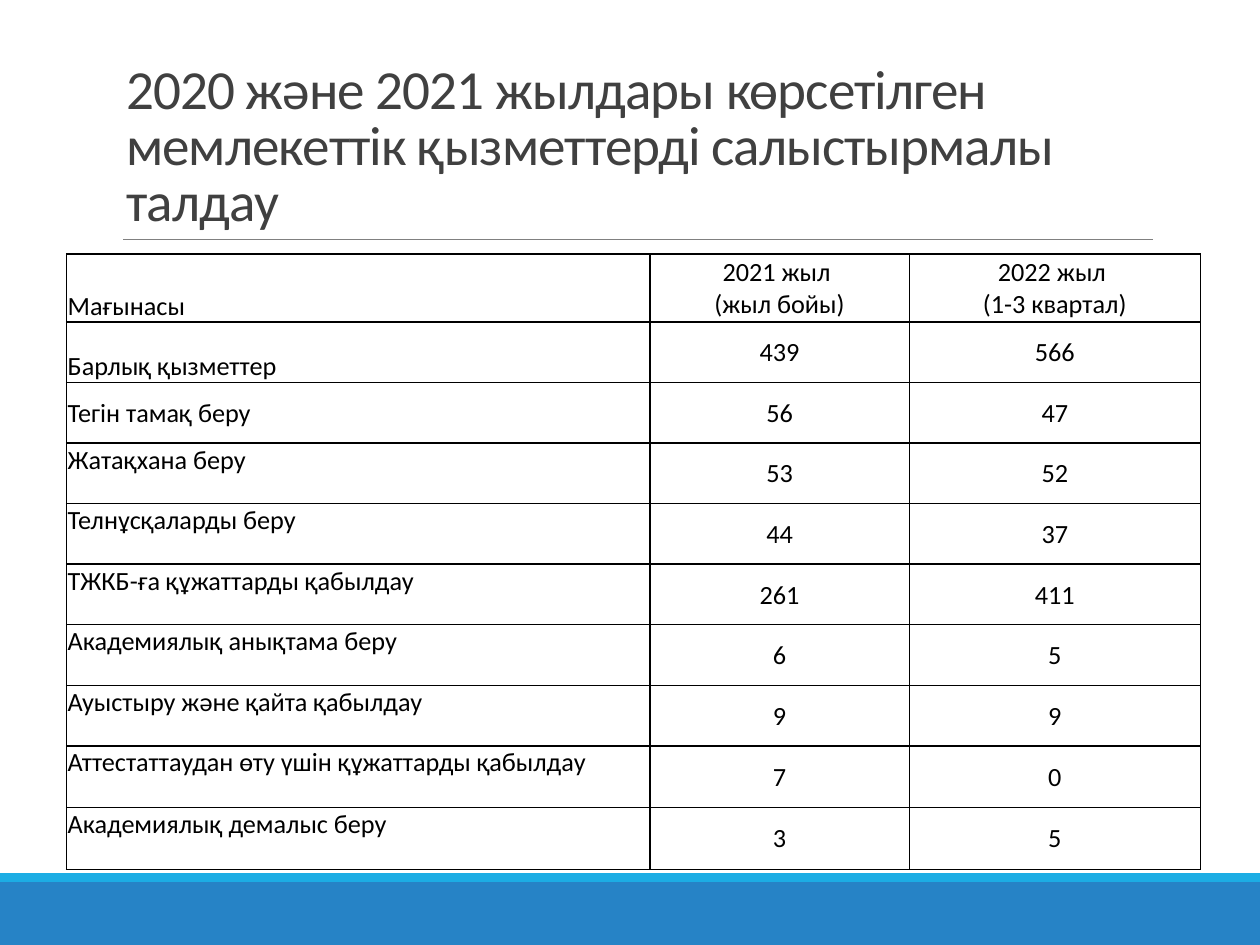
from pptx import Presentation
from pptx.dml.color import RGBColor as Rgb
from pptx.enum.shapes import MSO_CONNECTOR as Link, MSO_SHAPE as Shape
from pptx.enum.text import MSO_ANCHOR as Anchor, MSO_AUTO_SIZE as Fit, PP_ALIGN as Align
from pptx.oxml.ns import qn
from pptx.util import Pt
from lxml.etree import SubElement as Sub

# Content
TITLE = "2020 және 2021 жылдары көрсетілген мемлекеттік қызметтерді салыстырмалы талдау"
ROWS = [
    ("Мағынасы", "2021 жыл \n(жыл бойы)", "2022 жыл \n(1-3 квартал)"),
    ("Барлық қызметтер", "439", "566"),
    ("Тегін тамақ беру", "56", "47"),
    ("Жатақхана беру", "53", "52"),
    ("Телнұсқаларды беру", "44", "37"),
    ("ТЖКБ-ға құжаттарды қабылдау", "261", "411"),
    ("Академиялық анықтама беру", "6", "5"),
    ("Ауыстыру және қайта қабылдау", "9", "9"),
    ("Аттестаттаудан өту үшін құжаттарды қабылдау", "7", "0"),
    ("Академиялық демалыс беру", "3", "5"),
]
WIDTHS = [333.3, 148.3, 166.4]
HEIGHTS = [38.9] + [34.6] * 7 + [35.3] * 2
LABELS = [Anchor.BOTTOM] * 2 + [Anchor.MIDDLE] + [Anchor.TOP] * 7
BANDS = [(504, 36, "band"), (499, 5, "strip")]

THEME = {
    "font": "Calibri", "title": 31.5, "cell": 15,
    "ink": "404040", "text": "000000", "rule": "808080",
    "band": "2683C6", "strip": "1CADE4",
}


def tint(key):
    return Rgb.from_string(THEME[key])


def apply(obj, **form):
    for key, val in form.items():
        setattr(obj, key, val)


def style(font, size, ink):
    apply(font, name=THEME["font"], size=Pt(THEME[size]))
    font.color.rgb = tint(ink)


def border(cell):
    props = cell._tc.get_or_add_tcPr()
    for side in ("lnL", "lnR", "lnT", "lnB"):
        line = Sub(props, qn(f"a:{side}"), w=str(Pt(1)))
        fill = Sub(line, qn("a:solidFill"))
        Sub(fill, qn("a:srgbClr"), val=THEME["text"])


deck = Presentation()
apply(deck, slide_width=Pt(720), slide_height=Pt(540))
slide = deck.slides.add_slide(deck.slide_layouts[5])
shapes = slide.shapes

# Bottom bands
for top, high, key in BANDS:
    band = shapes.add_shape(Shape.RECTANGLE, 0, Pt(top), Pt(720), Pt(high))
    band.shadow.inherit = False
    band.fill.solid()
    band.fill.fore_color.rgb = tint(key)
    band.line.fill.background()

# Title and the rule under it
title = shapes.title
apply(title, left=Pt(65), top=Pt(22.3), width=Pt(594), height=Pt(114.5))
frame = title.text_frame
apply(frame, text=TITLE, word_wrap=True, auto_size=Fit.NONE,
      vertical_anchor=Anchor.BOTTOM)
para = frame.paragraphs[0]
apply(para, alignment=Align.LEFT, line_spacing=0.85)
run = para.runs[0]
style(run.font, "title", "ink")
run._r.get_or_add_rPr().set("spc", "-50")

rule = shapes.add_connector(Link.STRAIGHT, Pt(70.5), Pt(136.8), Pt(658.8), Pt(136.8))
rule.line.width = Pt(0.5)
rule.line.color.rgb = tint("rule")
Sub(rule._element.spPr, qn("a:effectLst"))

# Table
table = shapes.add_table(len(ROWS), len(WIDTHS), Pt(38), Pt(145.2),
                         Pt(sum(WIDTHS)), Pt(sum(HEIGHTS))).table
apply(table, first_row=False, horz_banding=False)
for col, wide in zip(table.columns, WIDTHS):
    col.width = Pt(wide)
for row, high in zip(table.rows, HEIGHTS):
    row.height = Pt(high)

for r, (words, label) in enumerate(zip(ROWS, LABELS)):
    for c, word in enumerate(words):
        cell = table.cell(r, c)
        apply(cell, text=word, vertical_anchor=Anchor.MIDDLE if c else label,
              margin_left=Pt(0.7), margin_right=Pt(0.7),
              margin_top=Pt(0.7), margin_bottom=0)
        border(cell)
        cell.fill.background()
        for para in cell.text_frame.paragraphs:
            para.alignment = Align.CENTER if c else Align.LEFT
            for run in para.runs:
                style(run.font, "cell", "text")

deck.save("out.pptx")
